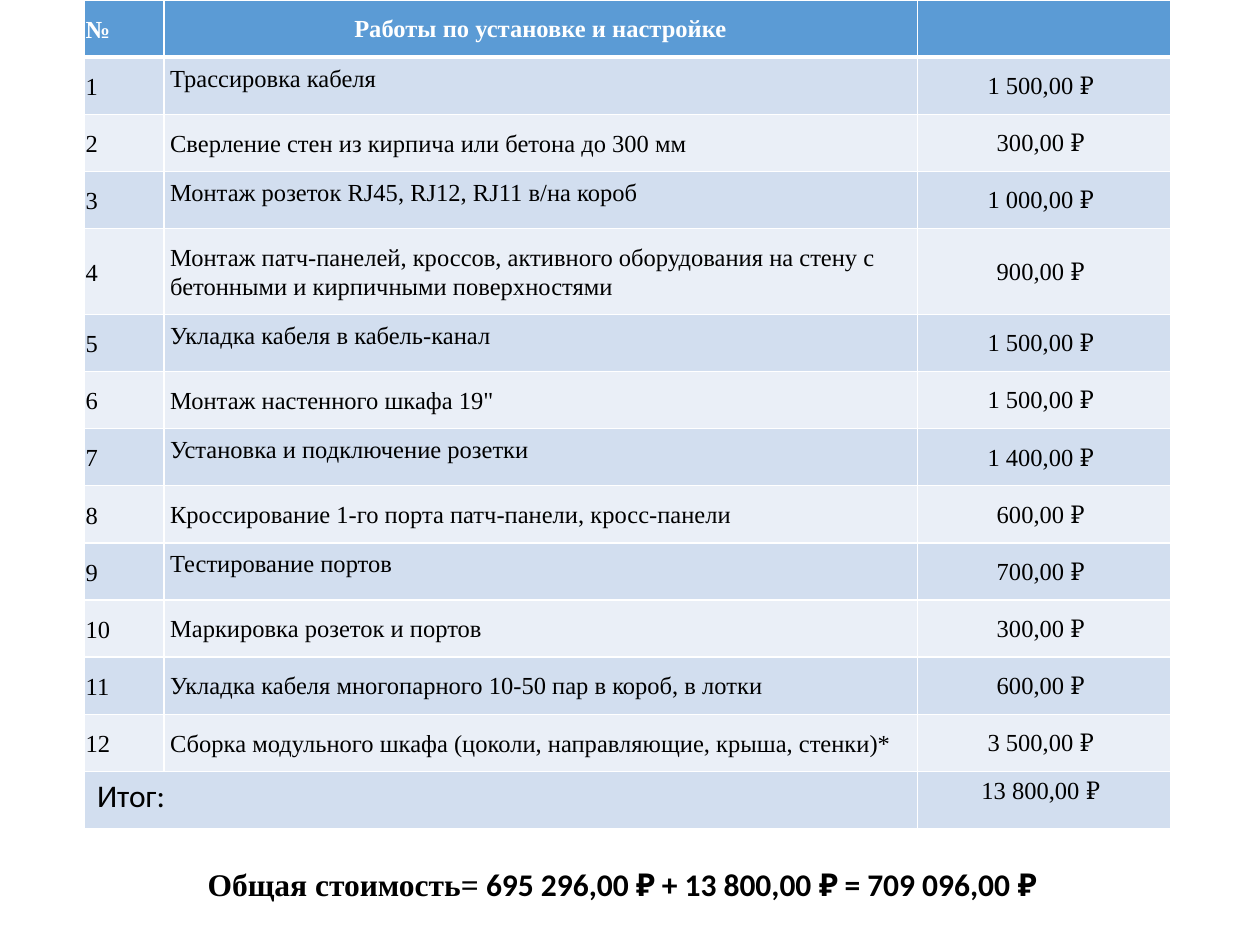
from lxml import etree
from pptx import Presentation
from pptx import util as u
from pptx.dml.color import RGBColor
from pptx.enum import text
from pptx.oxml.ns import qn

SERIF, SANS = "Times New Roman", "Calibri"
HEADER, BANDS = "5B9BD5", ("EAEFF7", "D2DEEF")
WHITE, BLACK = "FFFFFF", "000000"
TITLE = "Работы по установке и настройке"
WORKS = [
    ("Трассировка кабеля", "1 500,00"),
    ("Сверление стен из кирпича или бетона до 300 мм", "300,00"),
    ("Монтаж розеток RJ45, RJ12, RJ11 в/на короб", "1 000,00"),
    ("Монтаж патч-панелей, кроссов, активного оборудования на стену "
     "с бетонными и кирпичными поверхностями", "900,00"),
    ("Укладка кабеля в кабель-канал", "1 500,00"),
    ("Монтаж настенного шкафа 19\"", "1 500,00"),
    ("Установка и подключение розетки", "1 400,00"),
    ("Кроссирование 1-го порта патч-панели, кросс-панели", "600,00"),
    ("Тестирование портов", "700,00"),
    ("Маркировка розеток и портов", "300,00"),
    ("Укладка кабеля многопарного 10-50 пар в короб, в лотки", "600,00"),
    ("Сборка модульного шкафа (цоколи, направляющие, крыша, стенки)*", "3 500,00"),
]
TOTAL = ("Итог:", "13 800,00")
SUM = [("Общая стоимость=", SERIF),
       (" 695 296,00 ₽ + 13 800,00 ₽ = 709 096,00 ₽", SANS)]
COLS = (0.63, 5.98, 2.01)
TABLE_H, TALL_ROW, TALL_H = 6.58, 4, 0.68
TIGHT, EVEN, NORMAL = (0.01, 0.01, 0.01, 0), (0.05,) * 4, (0.1, 0.05, 0.1, 0.05)


def rgb(value):
    """Turn a hex string into a colour."""
    return RGBColor.from_string(value)


def set_font(font, name, size, color=BLACK, bold=False):
    """Set the face, size, colour and weight of a font."""
    font.name, font.size, font.bold = name, u.Pt(size), bold
    font.color.rgb = rgb(color)


def set_borders(cell, bottom):
    """Give a cell white borders with the bottom width in points."""
    tcPr = cell._tc.get_or_add_tcPr()
    for side, width in zip("LRTB", (1, 1, 1, bottom)):
        ln = etree.SubElement(tcPr, qn(f"a:ln{side}"), w=str(u.Pt(width)))
        fill = etree.SubElement(ln, qn("a:solidFill"))
        etree.SubElement(fill, qn("a:srgbClr"), val=WHITE)


def write(cell, words, margins, middle=True, center=False, spaced=False,
          name=SERIF, size=14, color=BLACK, bold=False):
    """Fill a cell with one formatted paragraph."""
    (cell.margin_left, cell.margin_top,
     cell.margin_right, cell.margin_bottom) = map(u.Inches, margins)
    cell.vertical_anchor = text.MSO_ANCHOR.MIDDLE if middle else text.MSO_ANCHOR.TOP
    cell.text = words
    p = cell.text_frame.paragraphs[0]
    p.alignment = text.PP_ALIGN.CENTER if center else text.PP_ALIGN.LEFT
    if spaced:
        p.line_spacing, p.space_after = 1.07, u.Pt(8)
    set_font(p.font, name, size, color, bold)


def add_works(slide):
    """Build the table of works, prices and the total."""
    count, last = len(WORKS) + 2, len(WORKS) + 1
    table = slide.shapes.add_table(
        count, len(COLS), u.Inches(0.67), 0,
        u.Inches(sum(COLS)), u.Inches(TABLE_H)).table
    for column, width in zip(table.columns, COLS):
        column.width = u.Inches(width)
    row_h = (TABLE_H - TALL_H) / (count - 1)
    for i, row in enumerate(table.rows):
        row.height = u.Inches(TALL_H if i == TALL_ROW else row_h)
        for cell in row.cells:
            set_borders(cell, 1 if i else 3)
            cell.fill.solid()
            cell.fill.fore_color.rgb = rgb(BANDS[i % 2] if i else HEADER)

    head = dict(spaced=True, color=WHITE, bold=True)
    write(table.cell(0, 0), "№", TIGHT, **head)
    write(table.cell(0, 1), TITLE, EVEN, center=True, **head)
    for i, (work, price) in enumerate(WORKS, 1):
        write(table.cell(i, 0), str(i), TIGHT, spaced=True)
        write(table.cell(i, 1), work, EVEN, spaced=True,
              middle=i % 2 == 0 or i == 11)
        write(table.cell(i, 2), f"{price} ₽ ", TIGHT, center=True)

    label, price = TOTAL
    table.cell(last, 0).merge(table.cell(last, 1))
    write(table.cell(last, 0), label, NORMAL, middle=False, name=SANS, size=18)
    write(table.cell(last, 2), f"{price} ₽ ", NORMAL, middle=False, center=True)


def add_sum(slide):
    """Add the line with the overall cost."""
    box = slide.shapes.add_textbox(*map(u.Inches, (1.55, 6.82, 6.87, 0.4)))
    tf = box.text_frame
    tf.word_wrap = False
    tf.auto_size = text.MSO_AUTO_SIZE.SHAPE_TO_FIT_TEXT
    for words, name in SUM:
        r = tf.paragraphs[0].add_run()
        r.text = words
        set_font(r.font, name, 18, bold=True)


def main():
    """Build and save the slide."""
    prs = Presentation()
    prs.slide_width, prs.slide_height = u.Inches(10), u.Inches(7.5)
    slide = prs.slides.add_slide(prs.slide_layouts[6])
    add_works(slide)
    add_sum(slide)
    prs.save("out.pptx")


if __name__ == "__main__":
    main()
